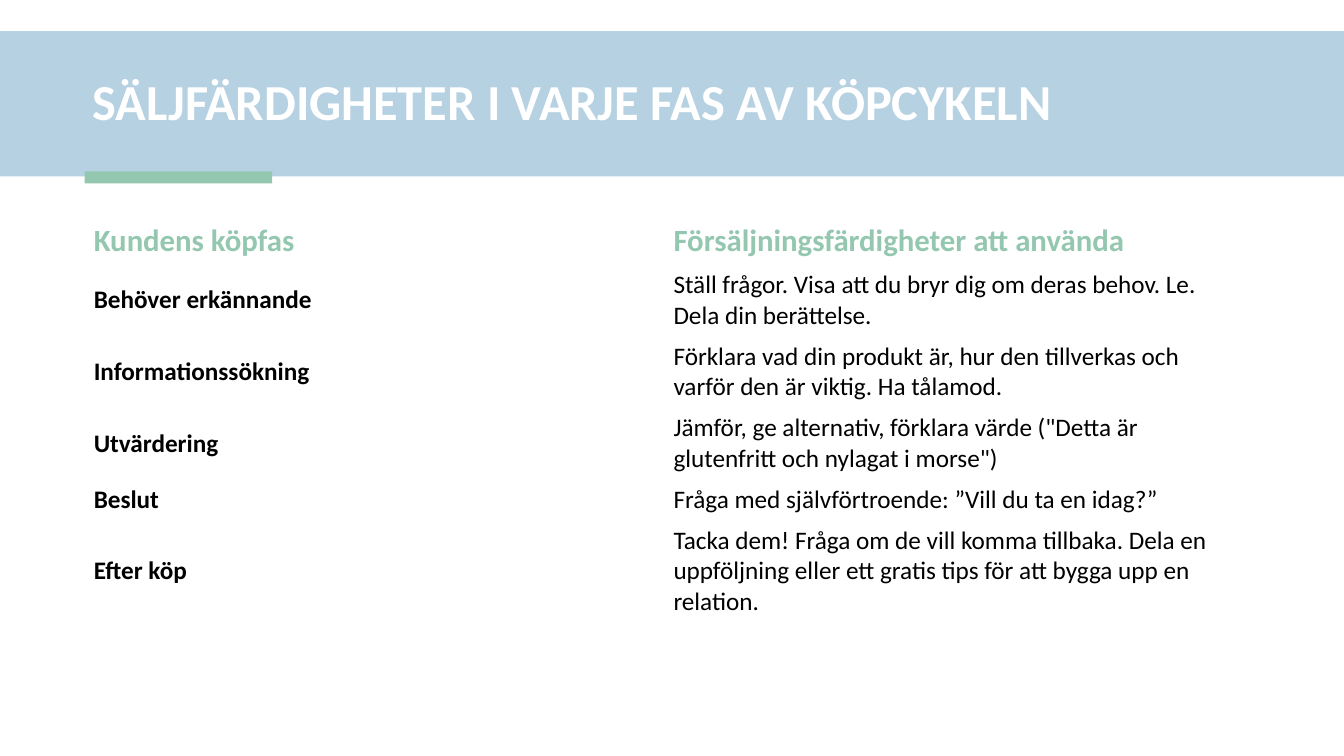
from pptx import Presentation
from pptx.dml.color import RGBColor
from pptx.enum.shapes import MSO_SHAPE
from pptx.enum.text import MSO_ANCHOR, MSO_AUTO_SIZE, PP_ALIGN
from pptx.util import Inches, Pt

BLUE = RGBColor(0xB6, 0xD1, 0xE1)
GREEN = RGBColor(0x94, 0xC7, 0xB0)
WHITE = RGBColor(0xFF, 0xFF, 0xFF)
BLACK = RGBColor(0x00, 0x00, 0x00)

LINE = 0.3  # least height of one 18 pt line, in inches
ROWS = [  # phase, skills, lines of text in the row
    ("Behöver erkännande",
     "Ställ frågor. Visa att du bryr dig om deras behov. Le. Dela din berättelse.", 2),
    ("Informationssökning",
     "Förklara vad din produkt är, hur den tillverkas och varför den är viktig. Ha tålamod.", 2),
    ("Utvärdering",
     "Jämför, ge alternativ, förklara värde (\"Detta är glutenfritt och nylagat i morse\")", 2),
    ("Beslut", "Fråga med självförtroende: ”Vill du ta en idag?”", 1),
    ("Efter köp",
     "Tacka dem! Fråga om de vill komma tillbaka. Dela en uppföljning eller ett gratis tips "
     "för att bygga upp en relation.", 3),
]


def write(tf, text, size=18, color=BLACK, bold=False):
    tf.word_wrap = True
    p = tf.paragraphs[0]
    p.alignment = PP_ALIGN.LEFT
    r = p.add_run()
    r.text = text
    r.font.name = "Calibri"
    r.font.size = Pt(size)
    r.font.bold = bold
    r.font.color.rgb = color


prs = Presentation()
prs.slide_width, prs.slide_height = Inches(13.33), Inches(7.5)
slide = prs.slides.add_slide(prs.slide_layouts[5])
title = slide.shapes.title

# Header band and accent bar, placed behind the title
for color, x, y, w, h in [(BLUE, 0, 0.31, 13.33, 1.44),
                          (GREEN, 0.84, 1.7, 1.86, 0.12)]:
    sp = slide.shapes.add_shape(MSO_SHAPE.RECTANGLE, Inches(x), Inches(y), Inches(w), Inches(h))
    sp.shadow.inherit = False
    sp.fill.solid()
    sp.fill.fore_color.rgb = color
    sp.line.fill.background()
    title._element.addprevious(sp._element)

title.left, title.top = Inches(0.82), Inches(0.42)
title.width, title.height = Inches(11.15), Inches(1.23)
tf = title.text_frame
tf.auto_size = MSO_AUTO_SIZE.NONE
tf.vertical_anchor = MSO_ANCHOR.MIDDLE
write(tf, "SÄLJFÄRDIGHETER I VARJE FAS AV KÖPCYKELN", size=36, color=WHITE, bold=True)
tf.paragraphs[0].line_spacing = 0.9

# Table of buying phases and sales skills
table = slide.shapes.add_table(len(ROWS) + 1, 2, Inches(0.83), Inches(2.15),
                               Inches(11.5), Inches(3.97)).table
table.first_row = table.horz_banding = False
table.rows[0].height = Inches(0.47)
for cell, heading in zip(table.rows[0].cells,
                         ["Kundens köpfas", "Försäljningsfärdigheter att använda"]):
    write(cell.text_frame, heading, size=22, color=GREEN, bold=True)
for i, (phase, skills, lines) in enumerate(ROWS, start=1):
    table.rows[i].height = Inches(lines * LINE + 0.1)
    write(table.cell(i, 0).text_frame, phase, bold=True)
    write(table.cell(i, 1).text_frame, skills)
for cell in table.iter_cells():
    cell.fill.solid()
    cell.fill.fore_color.rgb = WHITE
    cell.vertical_anchor = MSO_ANCHOR.MIDDLE

prs.save("out.pptx")
